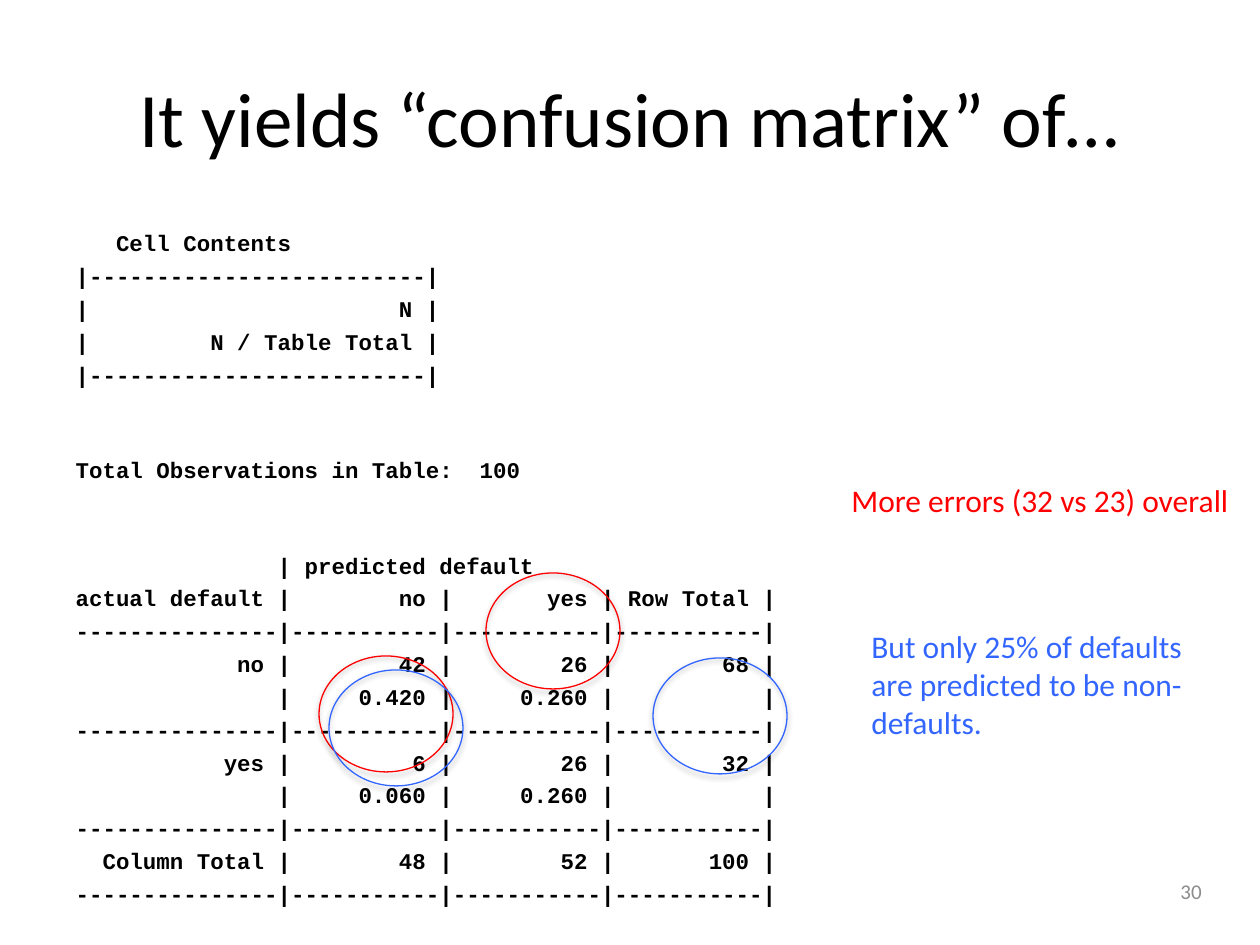
from lxml.etree import SubElement
from pptx import Presentation
from pptx.dml.color import RGBColor as RGB
from pptx.enum.shapes import MSO_SHAPE as SHAPE
from pptx.enum.text import MSO_ANCHOR as ANCHOR, MSO_AUTO_SIZE as FIT, PP_ALIGN as ALIGN
from pptx.oxml.ns import qn
from pptx.util import Emu, Pt

PX = 914400 / 126
THEME = {
    "black": RGB(0x00, 0x00, 0x00),
    "red": RGB(0xFF, 0x00, 0x00),
    "blue": RGB(0x33, 0x66, 0xFF),
    "gray": RGB(0x8C, 0x8C, 0x8C),
    "sans": "Calibri",
    "mono": "Courier New",
    "title": Pt(44),
    "note": Pt(18),
    "code": Pt(12.8),
    "number": Pt(12),
}
LINE_GAP = 3.4
BLANK_LINE = 17.9


def box(*px):
    return [Emu(round(v * PX)) for v in px]


def write(p, text, size, color, font="sans", bold=False):
    r = p.add_run()
    r.text = text
    look = {"size": THEME[size], "name": THEME[font], "bold": bold}
    for key, value in look.items():
        setattr(r.font, key, value)
    r.font.color.rgb = THEME[color]


prs = Presentation()
prs.slide_width, prs.slide_height = box(1260, 945)
s = prs.slides.add_slide(prs.slide_layouts[1])
title, body = s.placeholders

places = [(title, box(63, 38, 1134, 158)), (body, box(63, 223, 1134, 624))]
for sp, place in places:
    for key, value in zip(("left", "top", "width", "height"), place):
        setattr(sp, key, value)
    sp.text_frame.auto_size = FIT.NONE

title.text_frame.vertical_anchor = ANCHOR.MIDDLE
p = title.text_frame.paragraphs[0]
p.alignment = ALIGN.CENTER
write(p, "It yields “confusion matrix” of…", "title", "black")

key_rule = f"|{'-' * 25}|"
rule = "-" * 15 + f"|{'-' * 11}" * 3 + "|"
lines = [
    (1, f"{'Cell Contents':>16}"),
    (0, key_rule),
    (0, f"|{'N':>24} |"),
    (0, f"|{'N / Table Total':>24} |"),
    (0, key_rule),
    (2, f"Total Observations in Table:{100:>5}"),
    (2, f"{'':>15}| predicted default"),
]
rows = [
    ("actual default", "no", "yes", "Row Total"),
    None,
    ("no", "42", "26", "68"),
    ("", "0.420", "0.260", ""),
    None,
    ("yes", "6", "26", "32"),
    ("", "0.060", "0.260", ""),
    None,
    ("Column Total", "48", "52", "100"),
    None,
]
for row in rows:
    if row:
        cells = "".join(f" {value:>9} |" for value in row[1:])
        lines.append((0, f"{row[0]:>14} |{cells}"))
    else:
        lines.append((0, rule))

tf = body.text_frame
for i, (blanks, text) in enumerate(lines):
    p = tf.add_paragraph() if i else tf.paragraphs[0]
    p.space_before = Pt(LINE_GAP + blanks * BLANK_LINE)
    pPr = p._p.get_or_add_pPr()
    pPr.set("marL", "0")
    pPr.set("indent", "0")
    SubElement(pPr, qn("a:buNone"))
    write(p, text, "code", "black", "mono", True)

labels = [
    ((920, 866, 294, 50), "30", "number", "gray", False, ALIGN.RIGHT, ANCHOR.MIDDLE),
    ((839, 475, 410, 50), "More errors (32 vs 23) overall", "note", "red", False, ALIGN.LEFT, ANCHOR.TOP),
    ((859, 621, 360, 127), "But only 25% of defaults are predicted to be non-defaults.",
     "note", "blue", True, ALIGN.LEFT, ANCHOR.TOP),
]
for place, text, size, color, wrap, align, anchor in labels:
    tf = s.shapes.add_textbox(*box(*place)).text_frame
    tf.word_wrap = wrap or size == "number"
    tf.vertical_anchor = anchor
    p = tf.paragraphs[0]
    p.alignment = align
    write(p, text, size, color)

rings = [(319, 656, "red"), (486, 573, "red"), (653, 658, "blue"), (329, 670, "blue")]
for x, y, color in rings:
    sp = s.shapes.add_shape(SHAPE.OVAL, *box(x, y, 134, 116))
    sp.fill.background()
    sp.line.color.rgb = THEME[color]
    sp.line.width = Pt(0.75)
    sp.shadow.inherit = False
    effects = sp._element.spPr.find(qn("a:effectLst"))
    shadow = SubElement(effects, qn("a:outerShdw"), blurRad="40000", dist="23000",
                        dir="5400000", rotWithShape="0")
    tint = SubElement(shadow, qn("a:srgbClr"), val="000000")
    SubElement(tint, qn("a:alpha"), val="35000")

prs.save("out.pptx")
